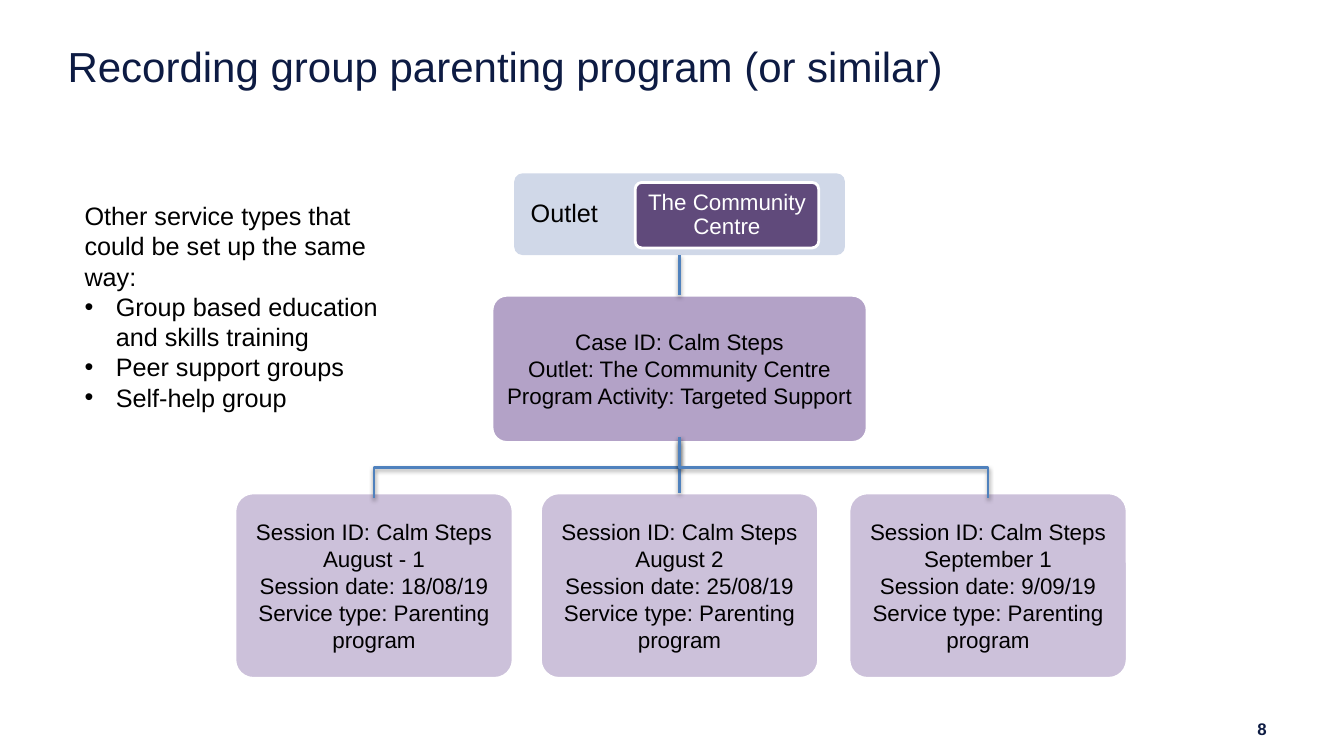
from lxml.etree import SubElement
from pptx import Presentation
from pptx.dml.color import RGBColor
from pptx.enum.shapes import MSO_CONNECTOR, MSO_SHAPE
from pptx.enum.text import MSO_ANCHOR, MSO_AUTO_SIZE, PP_ALIGN
from pptx.oxml.ns import qn
from pptx.util import Inches, Pt

NAVY, BLACK, WHITE = "0D1B43", "000000", "FFFFFF"
PLATE, OUTLET, CASE, SESSION = "D0D8E8", "604A7B", "B3A2C7", "CCC1DA"
LINK = "4F81BD"

PROGRAM = "Calm Steps"
SESSIONS = [
    (3.71, "August - 1", "18/08/19"),
    (6.74, "August 2", "25/08/19"),
    (9.8, "September 1", "9/09/19"),
]
TRUNK_X, BRANCH_TOP, BRANCH_BOTTOM = 6.74, 4.34, 4.94


def rgb(value):
    """Turn a hex string into a colour."""
    return RGBColor.from_string(value)


def write(shape, lines, size=16, color=BLACK, bold=False, align=PP_ALIGN.LEFT,
          anchor=MSO_ANCHOR.TOP, insets=(0.1, 0.05), spacing=None, bullets_from=None):
    """Fill a shape with one formatted paragraph per line."""
    frame = shape.text_frame
    frame.word_wrap = True
    frame.vertical_anchor = anchor
    frame.margin_left = frame.margin_right = Inches(insets[0])
    frame.margin_top = frame.margin_bottom = Inches(insets[1])
    for index, line in enumerate(lines):
        paragraph = frame.add_paragraph() if index else frame.paragraphs[0]
        paragraph.alignment = align
        paragraph.line_spacing = spacing
        if bullets_from is not None and index >= bullets_from:
            add_bullet(paragraph)
        run = paragraph.add_run()
        run.text = line
        run.font.name = "Arial"
        run.font.size = Pt(size)
        run.font.bold = bold
        run.font.color.rgb = rgb(color)


def add_bullet(paragraph):
    """Give a paragraph a round bullet with a hanging indent."""
    properties = paragraph._p.get_or_add_pPr()
    properties.set("marL", str(Inches(0.31)))
    properties.set("indent", str(-Inches(0.31)))
    SubElement(properties, qn("a:buFont"), typeface="Arial")
    SubElement(properties, qn("a:buChar"), char="•")


def add_text(slide, left, top, width, height, lines, **text_format):
    """Add a text box."""
    box = slide.shapes.add_textbox(Inches(left), Inches(top), Inches(width), Inches(height))
    write(box, lines, **text_format)
    return box


def add_card(slide, left, top, width, height, fill, lines, outline=WHITE, **text_format):
    """Add a rounded card with its text."""
    card = slide.shapes.add_shape(MSO_SHAPE.ROUNDED_RECTANGLE, Inches(left), Inches(top),
                                  Inches(width), Inches(height))
    card.adjustments[0] = 0.1
    card.shadow.inherit = False
    card.fill.solid()
    card.fill.fore_color.rgb = rgb(fill)
    if outline:
        card.line.color.rgb = rgb(outline)
        card.line.width = Pt(2)
    else:
        card.line.fill.background()
    style = dict(align=PP_ALIGN.CENTER, anchor=MSO_ANCHOR.MIDDLE, insets=(0.07, 0.07))
    write(card, lines, **{**style, **text_format})
    return card


def style_link(link):
    """Give a connector its blue line and soft shadow."""
    link.line.color.rgb = rgb(LINK)
    link.line.width = Pt(2)
    effects = SubElement(link._element.spPr, qn("a:effectLst"))
    shadow = SubElement(effects, qn("a:outerShdw"), blurRad=str(Pt(3.1)), dist=str(Pt(1.6)),
                        dir="5400000", rotWithShape="0")
    color = SubElement(shadow, qn("a:srgbClr"), val=BLACK)
    SubElement(color, qn("a:alpha"), val="38000")


def add_link(slide, upper, lower):
    """Join the bottom of one card to the top of another."""
    link = slide.shapes.add_connector(MSO_CONNECTOR.STRAIGHT, 0, 0, 0, 0)
    link.begin_connect(upper, 2)
    link.end_connect(lower, 0)
    style_link(link)


def add_branch(slide, target_x):
    """Add a down-across-down elbow from the trunk to a session."""
    drop, span = BRANCH_BOTTOM - BRANCH_TOP, abs(target_x - TRUNK_X)
    left = (TRUNK_X + target_x - drop) / 2
    top = (BRANCH_TOP + BRANCH_BOTTOM - span) / 2
    start, end, turn = left, left + drop, 90
    if target_x > TRUNK_X:
        start, end, turn = end, start, 270
    branch = slide.shapes.add_connector(MSO_CONNECTOR.ELBOW, Inches(start), Inches(top),
                                        Inches(end), Inches(top + span))
    branch._element.spPr.find(qn("a:xfrm")).set("rot", str(turn * 60000))
    style_link(branch)


def add_title(slide, text):
    """Place and format the title."""
    title = slide.shapes.title
    title.left, title.top = Inches(0.67), Inches(0.4)
    title.width, title.height = Inches(12), Inches(0.66)
    write(title, [text], size=30, color=NAVY, insets=(0, 0))


def main():
    """Build the slide."""
    deck = Presentation()
    deck.slide_width, deck.slide_height = Inches(13.33), Inches(7.5)
    slide = deck.slides.add_slide(deck.slide_layouts[5])
    add_title(slide, "Recording group parenting program (or similar)")
    add_text(slide, 11.57, 7.12, 1.09, 0.23, ["8"], size=12, color=NAVY, bold=True,
             align=PP_ALIGN.RIGHT, anchor=MSO_ANCHOR.MIDDLE)

    plate = add_card(slide, 5.1, 1.72, 3.28, 0.81, PLATE, ["Outlet"], outline=None, size=18,
                     align=PP_ALIGN.LEFT, insets=(0.14, 0.14), spacing=0.9)
    add_card(slide, 6.3, 1.81, 1.82, 0.65, OUTLET, ["The Community Centre"],
             color=WHITE, spacing=0.9)
    case = add_card(slide, 4.88, 2.93, 3.72, 1.46, CASE, [
        f"Case ID: {PROGRAM}",
        "Outlet: The Community Centre",
        "Program Activity: Targeted Support",
    ])
    add_link(slide, plate, case)

    for center, name, date in SESSIONS:
        session = add_card(slide, center - 1.38, 4.89, 2.76, 1.84, SESSION, [
            f"Session ID: {PROGRAM} {name}",
            f"Session date: {date}",
            "Service type: Parenting program",
        ])
        if center == TRUNK_X:
            add_link(slide, case, session)
        else:
            add_branch(slide, center)

    service_types = add_text(slide, 0.74, 1.94, 3.3, 2.22, [
        "Other service types that could be set up the same way:",
        "Group based education and skills training",
        "Peer support groups",
        "Self-help group",
    ], size=18, bullets_from=1)
    service_types.text_frame.auto_size = MSO_AUTO_SIZE.SHAPE_TO_FIT_TEXT

    deck.save("out.pptx")


if __name__ == "__main__":
    main()
